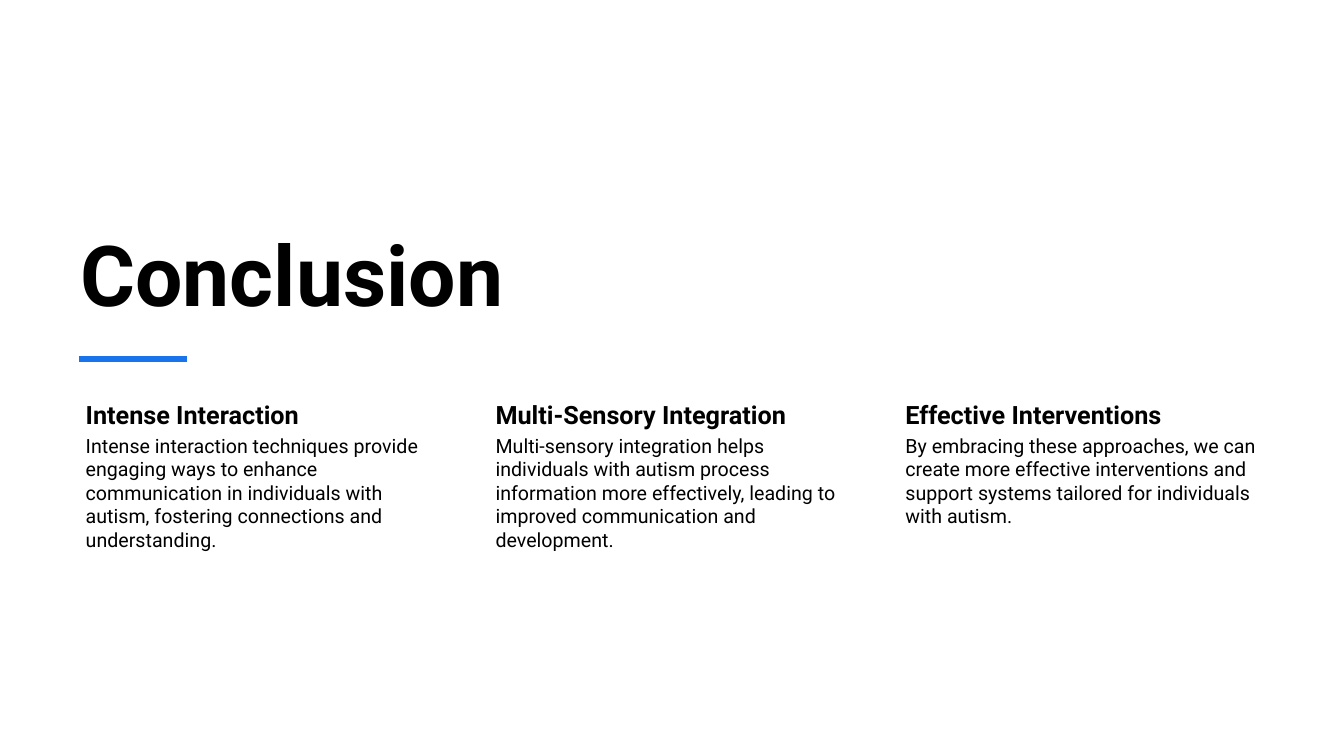
"""Build the conclusion slide with three takeaway columns."""
from lxml.etree import SubElement
from pptx import Presentation
from pptx.dml.color import RGBColor
from pptx.enum.shapes import MSO_CONNECTOR, MSO_SHAPE
from pptx.enum.text import MSO_ANCHOR
from pptx.oxml.ns import qn
from pptx.util import Inches, Pt


def color(code):
    return RGBColor.from_string(code)


def write(slide, text, box, size, bold, pads, anchor=MSO_ANCHOR.TOP):
    frame = slide.shapes.add_textbox(*map(Inches, box)).text_frame
    frame.word_wrap = True
    frame.vertical_anchor = anchor
    frame.margin_left, frame.margin_top, frame.margin_right, frame.margin_bottom = map(Inches, pads)
    run = frame.paragraphs[0].add_run()
    run.text = text
    run.font.name = "Roboto"
    run.font.size = Pt(size)
    run.font.bold = bold
    run.font.color.rgb = color("000000")


deck = Presentation()
deck.slide_width = Inches(13.33)
deck.slide_height = Inches(7.5)
slide = deck.slides.add_slide(deck.slide_layouts[6])

panel = slide.shapes.add_shape(MSO_SHAPE.RECTANGLE, 0, 0, deck.slide_width, deck.slide_height)
panel.shadow.inherit = False
panel.fill.solid()
panel.fill.fore_color.rgb = color("FFFFFF")
panel.line.fill.background()

write(slide, "Conclusion", (0.7, 1.72, 8.93, 1.54), 60, True, (0.1, 0.05, 0.1, 0.05), MSO_ANCHOR.BOTTOM)

points = [
    ("Intense Interaction",
     "Intense interaction techniques provide engaging ways to enhance communication "
     "in individuals with autism, fostering connections and understanding."),
    ("Multi-Sensory Integration",
     "Multi-sensory integration helps individuals with autism process information "
     "more effectively, leading to improved communication and development."),
    ("Effective Interventions",
     "By embracing these approaches, we can create more effective interventions "
     "and support systems tailored for individuals with autism."),
]
left, step, width = 0.7, 4.065, 3.69
for col, (head, body) in enumerate(points):
    x = left + col * step
    write(slide, head, (x, 3.93, width, 0.35), 18, True, (0.15, 0.03, 0.03, 0.03))
    write(slide, body, (x, 4.28, width, 2.34), 14, False, (0.15, 0.02, 0.02, 0.02))

accent = slide.shapes.add_connector(
    MSO_CONNECTOR.STRAIGHT, Inches(0.78), Inches(3.56), Inches(1.85), Inches(3.56))
accent.line.color.rgb = color("1973EB")
accent.line.width = Pt(4.5)
SubElement(accent.element.spPr, qn("a:effectLst"))

deck.save("out.pptx")
